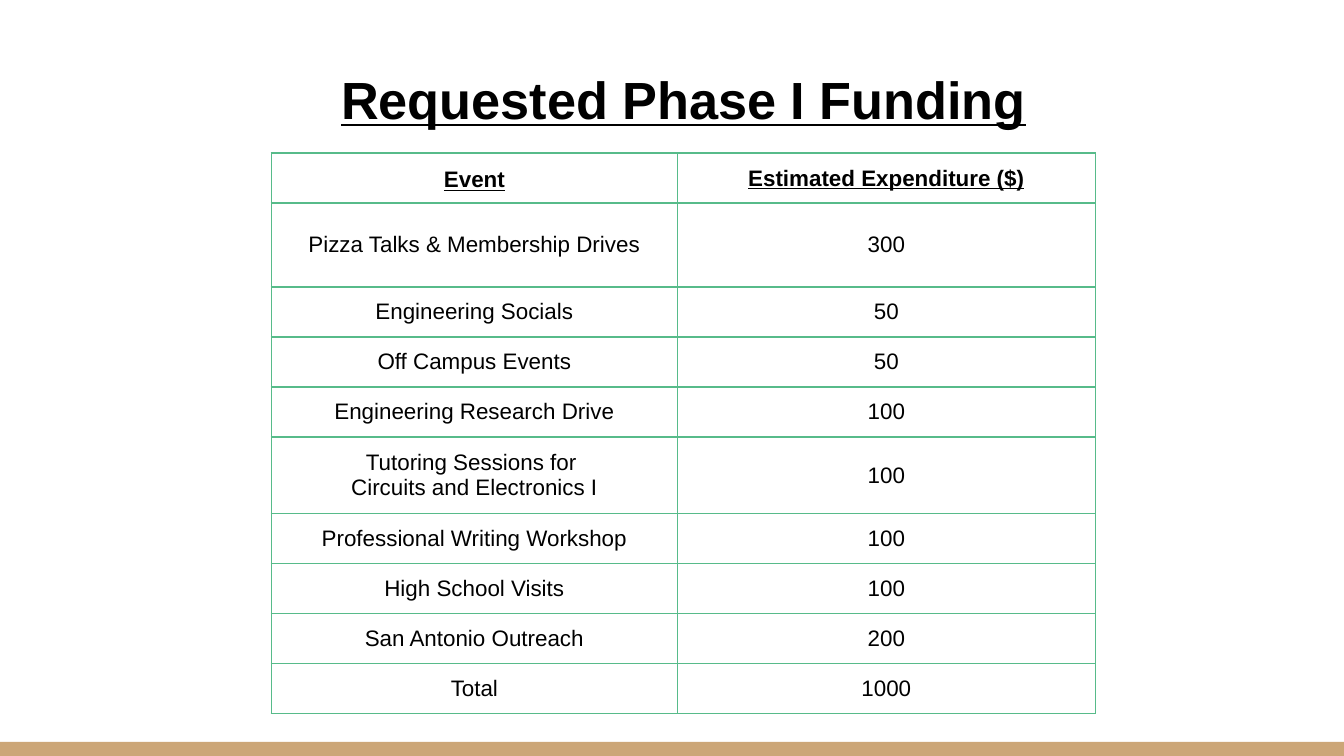
from dataclasses import dataclass

from lxml.etree import SubElement
from pptx import Presentation
from pptx.dml.color import RGBColor
from pptx.enum.shapes import MSO_SHAPE
from pptx.enum.text import MSO_ANCHOR, PP_ALIGN
from pptx.oxml.ns import qn
from pptx.util import Inches, Pt


@dataclass(frozen=True)
class Theme:
    font: str = "Arial"
    text: str = "000000"
    band: str = "CCA677"
    border: str = "57BB8A"
    title_size: int = 28
    body_size: int = 12
    border_width: int = 1


@dataclass(frozen=True)
class Row:
    event: str
    cost: str
    weight: float = 0.37
    header: bool = False


THEME = Theme()
SLIDE_WIDTH = 10
SLIDE_HEIGHT = SLIDE_WIDTH * 9 / 16
COLUMN_WIDTHS = (3.02, 3.11)
TABLE_HEIGHT = 4.17
CELL_MARGIN = Inches(0.07)
ROWS = (
    Row("Event", "Estimated Expenditure ($)", header=True),
    Row("Pizza Talks & Membership Drives", "300", weight=0.62),
    Row("Engineering Socials", "50"),
    Row("Off Campus Events", "50"),
    Row("Engineering Research Drive", "100"),
    Row("Tutoring Sessions for \nCircuits and Electronics I", "100", weight=0.57),
    Row("Professional Writing Workshop", "100"),
    Row("High School Visits", "100"),
    Row("San Antonio Outreach", "200"),
    Row("Total", "1000"),
)


def write_text(tf, text: str, size: int, heading: bool) -> None:
    """Write centred paragraphs; headings are bold and underlined."""
    tf.text = text
    for p in tf.paragraphs:
        p.alignment = PP_ALIGN.CENTER
        p.font.name = THEME.font
        p.font.size = Pt(size)
        p.font.bold = heading
        p.font.underline = heading
        p.font.color.rgb = RGBColor.from_string(THEME.text)


def set_borders(cell) -> None:
    tc_pr = cell._tc.get_or_add_tcPr()
    for position, edge in enumerate("LRTB"):
        ln = SubElement(tc_pr, qn(f"a:ln{edge}"), w=str(Pt(THEME.border_width)))
        fill = SubElement(ln, qn("a:solidFill"))
        SubElement(fill, qn("a:srgbClr"), val=THEME.border)
        SubElement(ln, qn("a:prstDash"), val="solid")
        tc_pr.insert(position, ln)


def add_band(s) -> None:
    sp = s.shapes.add_shape(MSO_SHAPE.RECTANGLE, Inches(0), Inches(5.52),
                            Inches(SLIDE_WIDTH), Inches(SLIDE_HEIGHT - 5.52))
    sp.shadow.inherit = False
    sp.fill.solid()
    sp.fill.fore_color.rgb = RGBColor.from_string(THEME.band)
    sp.line.fill.background()


def add_title(s, text: str) -> None:
    sp = s.shapes.add_textbox(Inches(2.08), Inches(0.4), Inches(6.01), Inches(0.63))
    tf = sp.text_frame
    tf.word_wrap = True
    tf.margin_left = tf.margin_right = tf.margin_top = tf.margin_bottom = Inches(0.1)
    write_text(tf, text, THEME.title_size, heading=True)


def add_funding_table(s, rows: tuple[Row, ...]) -> None:
    """Draw the table, sharing its height among rows by weight."""
    frame = s.shapes.add_table(
        len(rows), len(COLUMN_WIDTHS), Inches(2.02), Inches(1.14),
        Inches(sum(COLUMN_WIDTHS)), Inches(TABLE_HEIGHT))
    table = frame.table
    table.first_row = table.horz_banding = False
    for column, width in zip(table.columns, COLUMN_WIDTHS):
        column.width = Inches(width)
    scale = TABLE_HEIGHT / sum(row.weight for row in rows)
    for i, row in enumerate(rows):
        table.rows[i].height = Inches(row.weight * scale)
        for j, text in enumerate((row.event, row.cost)):
            cell = table.cell(i, j)
            cell.fill.background()
            cell.vertical_anchor = MSO_ANCHOR.MIDDLE
            cell.margin_left = cell.margin_right = CELL_MARGIN
            cell.margin_top = cell.margin_bottom = CELL_MARGIN
            write_text(cell.text_frame, text, THEME.body_size, row.header)
            set_borders(cell)
    table.cell(0, 0).text_frame.paragraphs[0].line_spacing = 1.15


def main() -> None:
    prs = Presentation()
    prs.slide_width, prs.slide_height = Inches(SLIDE_WIDTH), Inches(SLIDE_HEIGHT)
    s = prs.slides.add_slide(prs.slide_layouts[6])
    add_band(s)
    add_title(s, "Requested Phase I Funding")
    add_funding_table(s, ROWS)
    prs.save("out.pptx")


if __name__ == "__main__":
    main()
